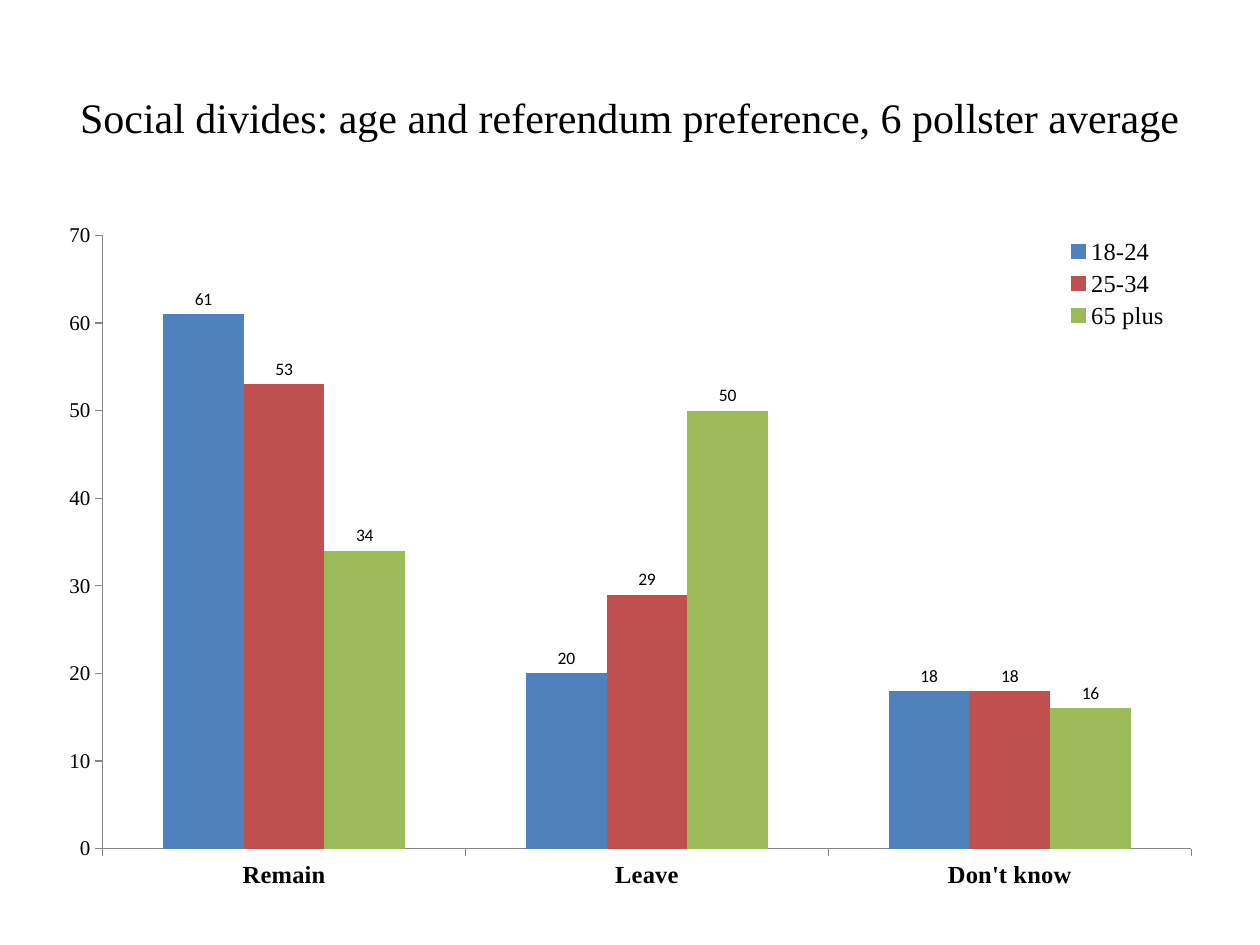
from dataclasses import dataclass

from lxml import etree
from pptx import Presentation
from pptx.chart.chart import Chart
from pptx.chart.data import CategoryChartData
from pptx.dml.color import RGBColor
from pptx.enum.chart import (
    XL_CHART_TYPE, XL_LABEL_POSITION, XL_LEGEND_POSITION, XL_TICK_MARK)
from pptx.enum.text import MSO_ANCHOR, PP_ALIGN
from pptx.oxml.ns import qn
from pptx.util import Emu, Pt

COLUMNS = XL_CHART_TYPE.COLUMN_CLUSTERED
ABOVE_BAR = XL_LABEL_POSITION.OUTSIDE_END
LEGEND_RIGHT = XL_LEGEND_POSITION.RIGHT
TICK_OUT, TICK_NONE = XL_TICK_MARK.OUTSIDE, XL_TICK_MARK.NONE
MIDDLE, CENTER = MSO_ANCHOR.MIDDLE, PP_ALIGN.CENTER
PX_PER_INCH = 126


@dataclass(frozen=True)
class Theme:
    serif: str = "Times New Roman"
    sans: str = "Calibri"
    text: str = "000000"
    axis: str = "868686"
    background: str = "FFFFFF"
    title_pt: int = 24
    category_pt: int = 14
    value_pt: int = 12
    legend_pt: int = 14
    label_pt: int = 10


@dataclass(frozen=True)
class Box:
    left: int
    top: int
    width: int
    height: int

    def emu(self) -> tuple[Emu, ...]:
        return tuple(px(n) for n in (self.left, self.top, self.width, self.height))


@dataclass(frozen=True)
class AgeGroup:
    name: str
    shares: tuple[int, ...]
    color: str


THEME = Theme()
TITLE = "Social divides: age and referendum preference, 6 pollster average"
TITLE_BOX = Box(63, 38, 1134, 157)
CHART_BOX = Box(63, 220, 1134, 669)
PREFERENCES = ("Remain", "Leave", "Don't know")
AGE_GROUPS = (
    AgeGroup("18-24", (61, 20, 18), "4F81BD"),
    AgeGroup("25-34", (53, 29, 18), "C0504D"),
    AgeGroup("65 plus", (34, 50, 16), "9BBB59"),
)


def px(length: int) -> Emu:
    return Emu(round(length * 914400 / PX_PER_INCH))


def style_font(font, name: str, size: int, bold: bool = False) -> None:
    font.name, font.size, font.bold = name, Pt(size), bold
    font.color.rgb = RGBColor.from_string(THEME.text)


def set_layout(parent, index: int, inner: bool, **fractions: float) -> None:
    """Place a chart part by fractions of the chart area."""
    for old in parent.findall(qn("c:layout")):
        parent.remove(old)
    layout = etree.Element(qn("c:layout"))
    manual = etree.SubElement(layout, qn("c:manualLayout"))
    settings = {"layoutTarget": "inner"} if inner else {}
    settings |= {"xMode": "edge", "yMode": "edge", **fractions}
    for tag, value in settings.items():
        etree.SubElement(manual, qn(f"c:{tag}")).set("val", str(value))
    parent.insert(index, layout)


def add_title(slide) -> None:
    frame = slide.shapes.add_textbox(*TITLE_BOX.emu()).text_frame
    frame.word_wrap = True
    frame.vertical_anchor = MIDDLE
    frame.text = TITLE
    heading = frame.paragraphs[0]
    heading.alignment = CENTER
    style_font(heading.runs[0].font, THEME.serif, THEME.title_pt)


def style_axis(axis, size: int, bold: bool = False) -> None:
    axis.has_major_gridlines = False
    axis.major_tick_mark, axis.minor_tick_mark = TICK_OUT, TICK_NONE
    axis.format.line.color.rgb = RGBColor.from_string(THEME.axis)
    axis.format.line.width = Pt(0.75)
    style_font(axis.tick_labels.font, THEME.serif, size, bold)


def style_bars(chart: Chart) -> None:
    plot = chart.plots[0]
    plot.gap_width, plot.overlap = 150, 0
    plot.vary_by_categories = False
    for bars, group in zip(plot.series, AGE_GROUPS):
        bars.invert_if_negative = False
        bars.format.fill.solid()
        bars.format.fill.fore_color.rgb = RGBColor.from_string(group.color)
        labels = bars.data_labels
        labels.show_value = True
        labels.position = ABOVE_BAR
        style_font(labels.font, THEME.sans, THEME.label_pt)


def add_preference_chart(slide) -> None:
    polling = CategoryChartData(number_format="General")
    polling.categories = PREFERENCES
    for group in AGE_GROUPS:
        polling.add_series(group.name, group.shares)
    chart = slide.shapes.add_chart(COLUMNS, *CHART_BOX.emu(), polling).chart
    chart.has_title = False
    style_font(chart.font, THEME.sans, THEME.label_pt)
    style_bars(chart)

    # Axes
    style_axis(chart.category_axis, THEME.category_pt, bold=True)
    style_axis(chart.value_axis, THEME.value_pt)
    chart.value_axis.minimum_scale = 0
    chart.value_axis.maximum_scale = 70
    chart.value_axis.major_unit = 10

    # Legend over the empty top right corner
    chart.has_legend = True
    chart.legend.position = LEGEND_RIGHT
    chart.legend.include_in_layout = False
    style_font(chart.legend.font, THEME.serif, THEME.legend_pt)

    # Places of plot and legend
    area = chart._chartSpace.find(qn("c:chart"))
    set_layout(area.find(qn("c:plotArea")), 0, True, x=0.035, y=0.023, w=0.96, h=0.917)
    set_layout(area.find(qn("c:legend")), 1, False, x=0.88, y=0.02, w=0.1, h=0.15)


def main() -> None:
    deck = Presentation()
    deck.slide_width, deck.slide_height = px(1260), px(945)
    slide = deck.slides.add_slide(deck.slide_layouts[6])
    slide.background.fill.solid()
    slide.background.fill.fore_color.rgb = RGBColor.from_string(THEME.background)
    add_title(slide)
    add_preference_chart(slide)
    deck.save("out.pptx")


if __name__ == "__main__":
    main()
